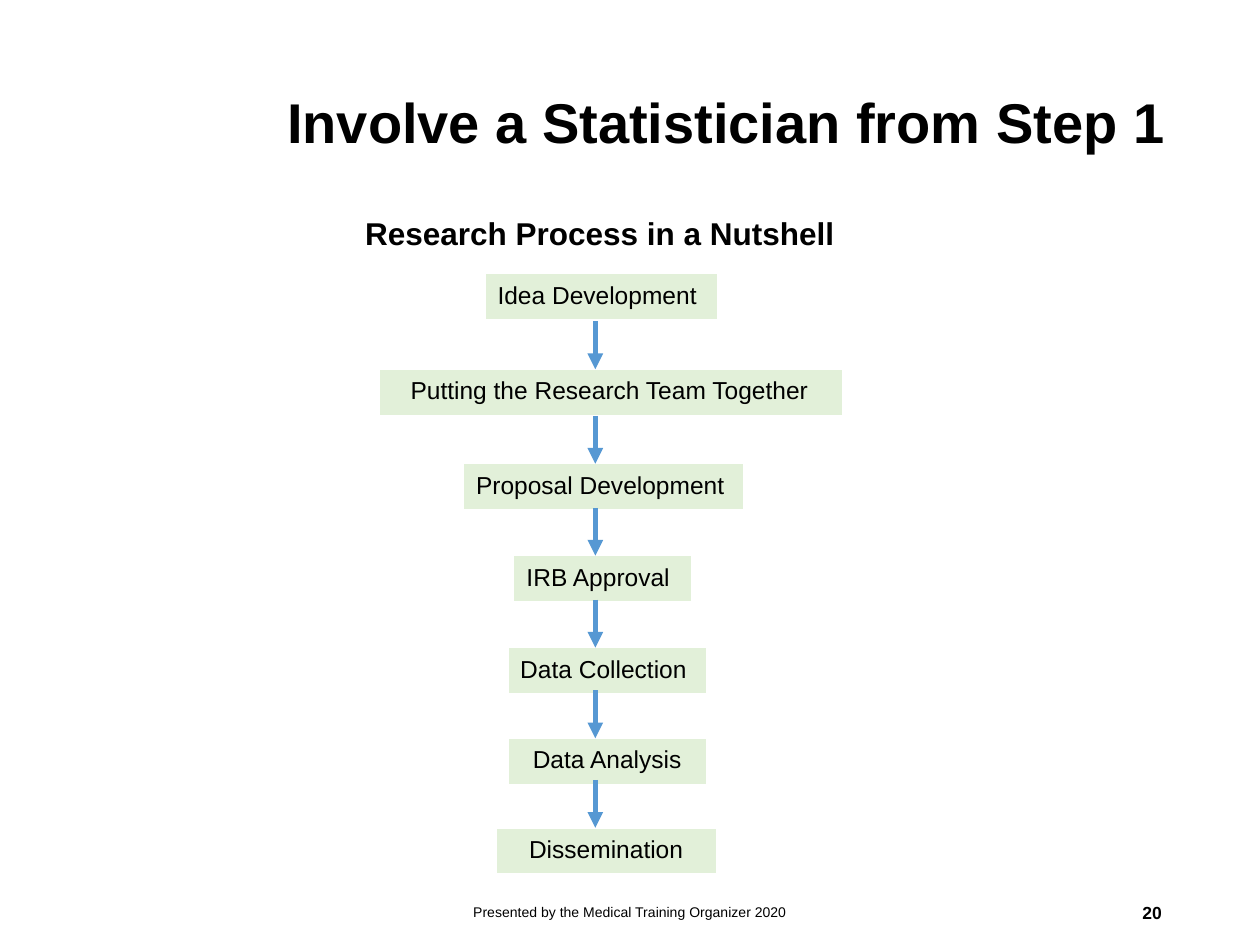
from collections import namedtuple

from lxml.etree import SubElement
from pptx import Presentation
from pptx.dml.color import RGBColor
from pptx.enum.shapes import MSO_CONNECTOR as Connector
from pptx.enum.text import MSO_ANCHOR as Anchor, MSO_AUTO_SIZE as AutoSize, PP_ALIGN as Align
from pptx.oxml.ns import qn
from pptx.util import Inches, Pt

COLORS = {"text": "000000", "step": "E2F0D9", "arrow": "5698D3", "border": "FFFFFF"}
FONT = "Arial"
GRID_COLUMNS, GRID_ROWS = 100, 75
SLIDE_WIDTH, SLIDE_HEIGHT = Inches(10), Inches(7.5)
STEP_ROWS = 3.7
ARROW_COLUMN, ARROW_ROWS = 47.25, 3.8

Step = namedtuple("Step", "label row column columns text_column text_columns")
STEPS = [
    Step("Idea Development", 21.7, 38.5, 18.5, 38.5, 18.5),
    Step("Putting the Research Team Together", 29.3, 30.1, 36.8, 31.6, 39.8),
    Step("Proposal Development", 36.8, 36.8, 22.2, 36.8, 22.7),
    Step("IRB Approval", 44.1, 40.7, 14.2, 40.8, 18.5),
    Step("Data Collection", 51.4, 40.3, 15.8, 40.3, 18.5),
    Step("Data Analysis", 58.6, 40.3, 15.8, 41.3, 18.5),
    Step("Dissemination", 65.7, 39.4, 17.5, 41, 18.5),
]


def color(name):
    return RGBColor.from_string(COLORS[name])


def across(columns):
    return round(SLIDE_WIDTH * columns / GRID_COLUMNS)


def down(rows):
    return round(SLIDE_HEIGHT * rows / GRID_ROWS)


def area(column, row, columns, rows):
    return across(column), down(row), across(columns), down(rows)


def write(paragraph, text, size, bold=False, align=Align.LEFT):
    paragraph.alignment = align
    run = paragraph.add_run()
    run.text = text
    run.font.name = FONT
    run.font.size = Pt(size)
    run.font.bold = bold
    run.font.color.rgb = color("text")


def add_title(slide, text):
    title = slide.shapes.title
    title.left, title.top, title.width, title.height = area(21.8, 2.7, 73.8, 14.5)
    frame = title.text_frame
    frame.margin_left = frame.margin_right = Inches(0.1)
    frame.margin_top = frame.margin_bottom = Inches(0.1)
    frame.vertical_anchor = Anchor.MIDDLE
    frame.auto_size = AutoSize.NONE
    paragraph = frame.paragraphs[0]
    paragraph.line_spacing = 0.9
    write(paragraph, text, 32, bold=True)


def add_text(slide, place, text, size, bold=False, align=Align.LEFT,
             anchor=Anchor.TOP, wrap=True, grow=True):
    frame = slide.shapes.add_textbox(*area(*place)).text_frame
    frame.word_wrap = wrap
    frame.auto_size = AutoSize.SHAPE_TO_FIT_TEXT if grow else AutoSize.NONE
    frame.vertical_anchor = anchor
    write(frame.paragraphs[0], text, size, bold, align)


def add_border(properties, side, width):
    line = SubElement(properties, qn(f"a:{side}"), w=str(Pt(width)))
    fill = SubElement(line, qn("a:solidFill"))
    SubElement(fill, qn("a:srgbClr"), val=COLORS["border"])


def add_step_table(slide, step):
    place = area(step.column, step.row, step.columns, STEP_ROWS)
    table = slide.shapes.add_table(1, 1, *place).table
    table.first_row = table.horz_banding = False
    cell = table.cell(0, 0)
    ending = SubElement(cell.text_frame.paragraphs[0]._p, qn("a:endParaRPr"), sz="1800")
    SubElement(ending, qn("a:latin"), typeface=FONT)
    properties = cell._tc.get_or_add_tcPr()
    for side, width in {"lnL": 1, "lnR": 1, "lnT": 1, "lnB": 3}.items():
        add_border(properties, side, width)
    cell.fill.solid()
    cell.fill.fore_color.rgb = color("step")


def add_arrow(slide, end_row):
    x = across(ARROW_COLUMN)
    arrow = slide.shapes.add_connector(
        Connector.STRAIGHT, x, down(end_row - ARROW_ROWS), x, down(end_row))
    arrow.line.color.rgb = color("arrow")
    arrow.line.width = Pt(3)
    SubElement(arrow.line._get_or_add_ln(), qn("a:tailEnd"), type="triangle")
    SubElement(arrow._element.spPr, qn("a:effectLst"))


def main():
    presentation = Presentation()
    presentation.slide_width, presentation.slide_height = SLIDE_WIDTH, SLIDE_HEIGHT
    slide = presentation.slides.add_slide(presentation.slide_layouts[5])

    add_title(slide, "Involve a Statistician from Step 1")
    for step in STEPS:
        add_step_table(slide, step)
    for step in STEPS:
        place = (step.text_column, step.row, step.text_columns, 3.4)
        add_text(slide, place, step.label, 14)
    for step in STEPS[1:]:
        add_arrow(slide, step.row)

    add_text(slide, (33.1, 70.4, 33.8, 4), "Presented by the Medical Training Organizer 2020",
             8, align=Align.CENTER, anchor=Anchor.MIDDLE, grow=False)
    add_text(slide, (84.1, 70.4, 9.1, 4), "20", 10, bold=True,
             align=Align.RIGHT, anchor=Anchor.MIDDLE, grow=False)
    add_text(slide, (28, 16.5, 39.6, 4), "Research Process in a Nutshell",
             18, bold=True, wrap=False)
    presentation.save("out.pptx")


if __name__ == "__main__":
    main()
